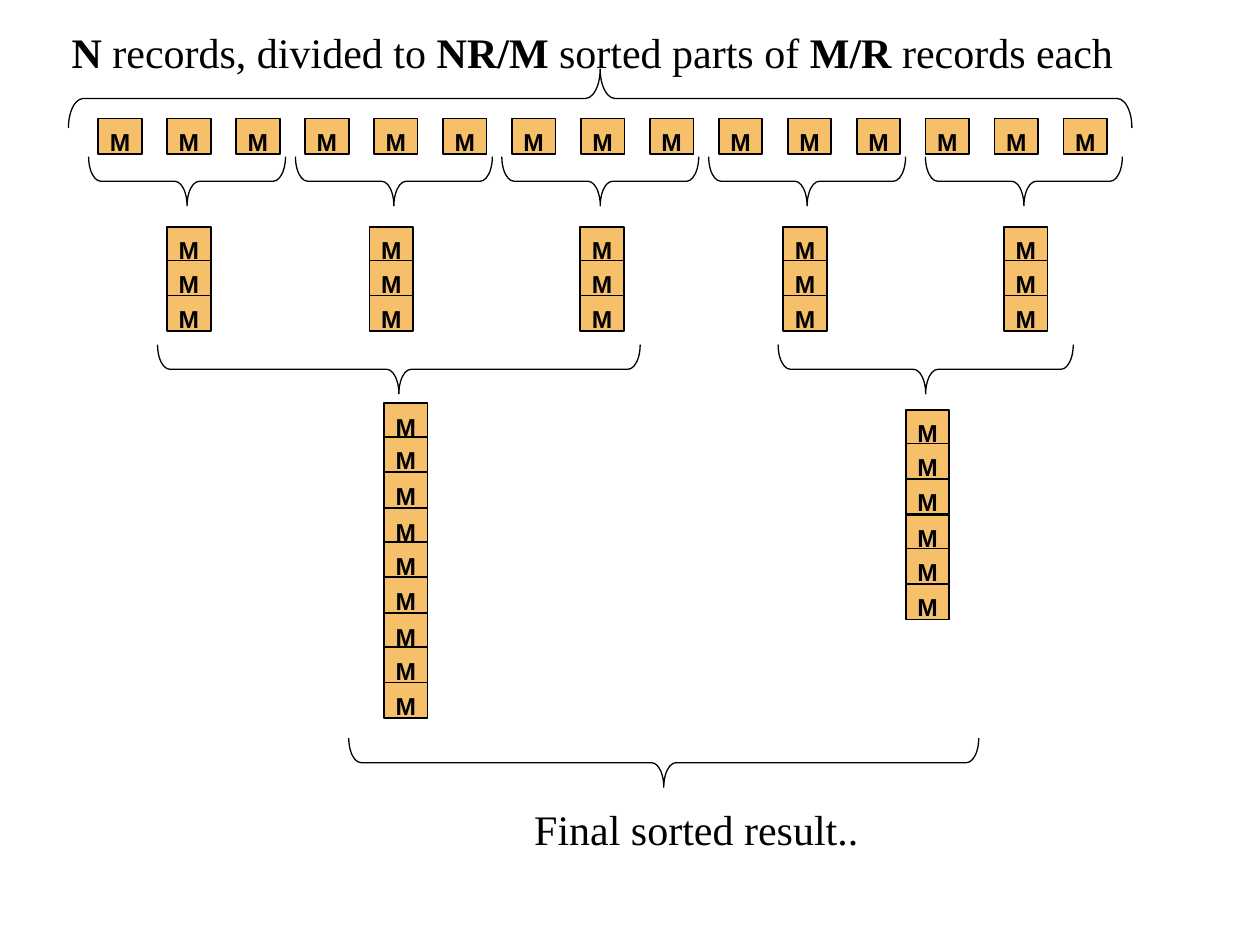
from pptx import Presentation
from pptx.dml.color import RGBColor
from pptx.enum.shapes import MSO_SHAPE
from pptx.enum.text import MSO_ANCHOR, MSO_AUTO_SIZE, PP_ALIGN
from pptx.util import Cm, Pt

COLORS = {"record": "F6BF69", "ink": "000000"}
BODY_FONT, RECORD_FONT = "Times New Roman", "Arial"
RECORD_WIDTH, RECORD_HEIGHT = 0.88, 0.72
RECORD_PITCH = 1.39
TRIPLE_OFFSETS = (0, 0.68, 1.39)
TRIPLE_PITCH = 2.12


class MergeSortSlide:
    """Holds the style and the current slide; lengths are in centimetres."""

    def __init__(self, slide):
        self.slide = slide

    def color(self, name):
        return RGBColor.from_string(COLORS[name])

    def add_runs(self, paragraph, runs, font, size):
        for text, bold in runs:
            run = paragraph.add_run()
            run.text = text
            run.font.name = font
            run.font.size = Pt(size)
            run.font.bold = bold
            run.font.color.rgb = self.color("ink")

    def caption(self, shape, runs):
        frame = shape.text_frame
        frame.word_wrap = True
        frame.auto_size = MSO_AUTO_SIZE.NONE
        frame.vertical_anchor = MSO_ANCHOR.TOP
        paragraph = frame.paragraphs[0]
        paragraph.alignment = PP_ALIGN.LEFT
        self.add_runs(paragraph, runs, BODY_FONT, 24)

    def title(self, left, top, width, height, runs):
        shape = self.slide.shapes.title
        shape.left, shape.top = Cm(left), Cm(top)
        shape.width, shape.height = Cm(width), Cm(height)
        self.caption(shape, runs)

    def text(self, left, top, width, height, runs):
        box = self.slide.shapes.add_textbox(Cm(left), Cm(top), Cm(width), Cm(height))
        self.caption(box, runs)

    def record(self, left, top):
        shape = self.slide.shapes.add_shape(
            MSO_SHAPE.RECTANGLE, Cm(left), Cm(top), Cm(RECORD_WIDTH), Cm(RECORD_HEIGHT))
        shape.shadow.inherit = False
        shape.fill.solid()
        shape.fill.fore_color.rgb = self.color("record")
        shape.line.color.rgb = self.color("ink")
        shape.line.width = Pt(1)
        frame = shape.text_frame
        frame.word_wrap = False
        frame.vertical_anchor = MSO_ANCHOR.TOP
        frame.margin_left = frame.margin_right = frame.margin_bottom = 0
        frame.margin_top = Cm(0.17)
        paragraph = frame.paragraphs[0]
        paragraph.alignment = PP_ALIGN.CENTER
        self.add_runs(paragraph, [("M", True)], RECORD_FONT, 14)

    def stack(self, left, top, triples):
        for triple in range(triples):
            for offset in TRIPLE_OFFSETS:
                self.record(left, top + triple * TRIPLE_PITCH + offset)

    def brace(self, center, top, span, depth=0.99, rotation=90):
        """Places a turned brace by its centre, top edge and span as seen."""
        shape = self.slide.shapes.add_shape(
            MSO_SHAPE.RIGHT_BRACE, Cm(center - depth / 2),
            Cm(top + depth / 2 - span / 2), Cm(depth), Cm(span))
        shape.rotation = rotation
        shape.adjustments[0] = 0.25
        shape.adjustments[1] = 0.5
        shape.shadow.inherit = False
        shape.fill.background()
        shape.line.color.rgb = self.color("ink")
        shape.line.width = Pt(0.75)


def main():
    presentation = Presentation()
    presentation.slide_width, presentation.slide_height = Cm(25.4), Cm(19.05)
    page = MergeSortSlide(presentation.slides.add_slide(presentation.slide_layouts[5]))

    # Heading and the sorted parts below it
    page.title(1.19, 0.41, 22.63, 1.3, [
        ("N", True), (" records, divided to ", False), ("NR/M", True),
        (" sorted parts of ", False), ("M/R", True), (" records each", False)])
    for index in range(15):
        page.record(1.98 + index * RECORD_PITCH, 2.39)
    page.brace(12.1, 1.39, 21.44, depth=1.19, rotation=270)

    # First merge: three parts into each stack
    for center, left in ((3.77, 3.37), (7.94, 7.45), (12.1, 11.7),
                         (16.27, 15.79), (20.64, 20.24)):
        page.brace(center, 3.16, 3.97)
        page.stack(left, 4.57, triples=1)

    # Second merge: three stacks and two stacks
    for center, span, left, top, triples in ((8.04, 9.73, 7.74, 8.13, 3),
                                             (18.66, 5.95, 18.26, 8.26, 2)):
        page.brace(center, 6.95, span)
        page.stack(left, top, triples)

    # Final merge
    page.brace(13.38, 14.88, 12.7)
    page.text(10.52, 16.08, 7.34, 1.3, [("Final sorted result..", False)])

    presentation.save("out.pptx")


if __name__ == "__main__":
    main()
